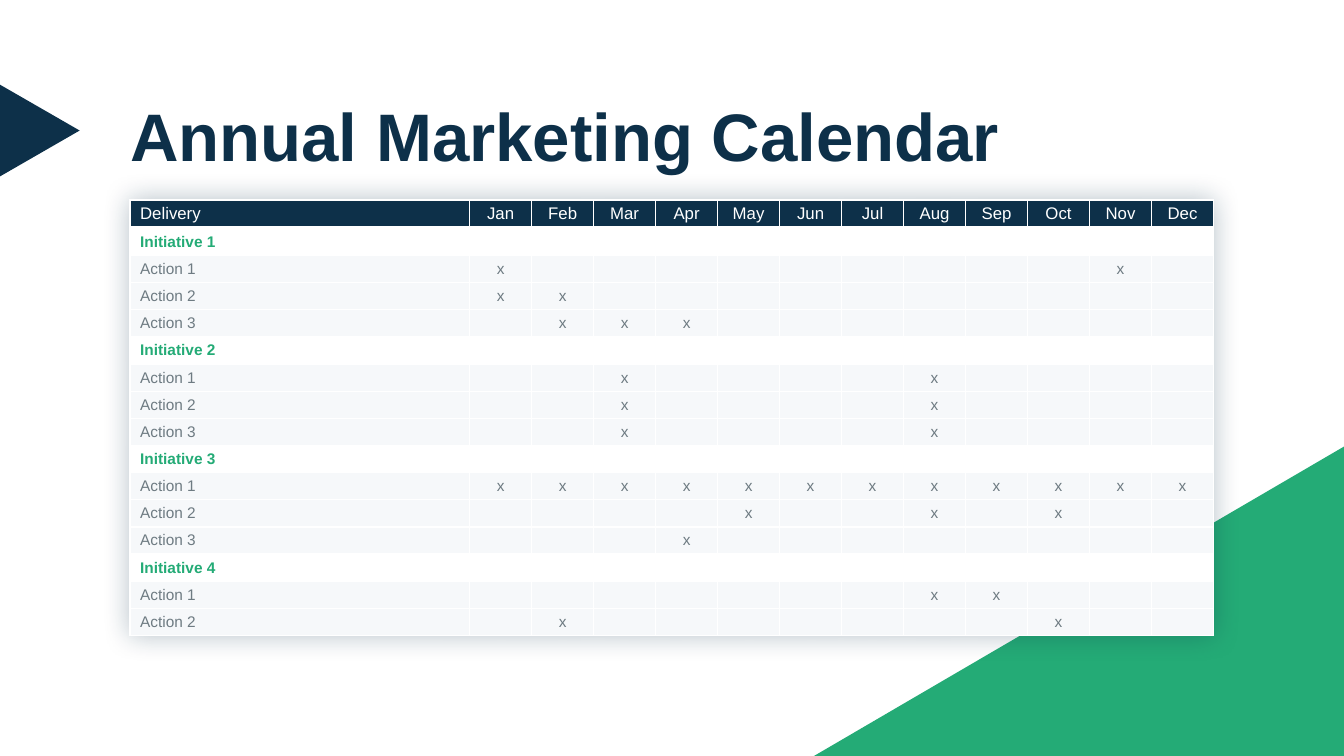
from dataclasses import dataclass

from lxml.etree import SubElement, fromstring
from pptx import Presentation
from pptx.dml.color import RGBColor
from pptx.enum.shapes import MSO_SHAPE
from pptx.enum.text import MSO_ANCHOR, PP_ALIGN
from pptx.oxml.ns import nsdecls, qn
from pptx.slide import Slide
from pptx.table import Table, _Cell
from pptx.util import Pt


@dataclass(frozen=True)
class Theme:
    font: str = "Arial"
    navy: str = "0D3049"
    green: str = "24AB76"
    gray: str = "6E7B82"
    pale: str = "F6F8FA"
    white: str = "FFFFFF"
    title_size: float = 48
    header_size: float = 12
    body_size: float = 11


@dataclass(frozen=True)
class Triangle:
    preset: MSO_SHAPE
    left: float
    top: float
    width: float
    height: float
    color: str
    rotation: float = 0
    flipped: bool = False


@dataclass(frozen=True)
class Action:
    name: str
    months: tuple[str, ...]


@dataclass(frozen=True)
class Initiative:
    name: str
    actions: tuple[Action, ...]


THEME = Theme()
MONTHS = ("Jan", "Feb", "Mar", "Apr", "May", "Jun",
          "Jul", "Aug", "Sep", "Oct", "Nov", "Dec")
TRIANGLES = (
    Triangle(MSO_SHAPE.RIGHT_TRIANGLE, 578.9, 319, 381.1, 222.5, THEME.green, flipped=True),
    Triangle(MSO_SHAPE.ISOSCELES_TRIANGLE, -4.3, 64.8, 65.5, 56.9, THEME.navy, rotation=90),
)
INITIATIVES = (
    Initiative("Initiative 1", (
        Action("Action 1", ("Jan", "Nov")),
        Action("Action 2", ("Jan", "Feb")),
        Action("Action 3", ("Feb", "Mar", "Apr")),
    )),
    Initiative("Initiative 2", (
        Action("Action 1", ("Mar", "Aug")),
        Action("Action 2", ("Mar", "Aug")),
        Action("Action 3", ("Mar", "Aug")),
    )),
    Initiative("Initiative 3", (
        Action("Action 1", MONTHS),
        Action("Action 2", ("May", "Aug", "Oct")),
        Action("Action 3", ("Apr",)),
    )),
    Initiative("Initiative 4", (
        Action("Action 1", ("Aug", "Sep")),
        Action("Action 2", ("Feb", "Oct")),
    )),
)
TABLE_LEFT, TABLE_TOP = 92.9, 142.8
NAME_WIDTH, MONTH_WIDTH = 242.6, 44.29
HEADER_HEIGHT, INITIATIVE_HEIGHT, ACTION_HEIGHT = 20, 19.65, 19.35


def draw_triangle(page: Slide, triangle: Triangle) -> None:
    shape = page.shapes.add_shape(
        triangle.preset, Pt(triangle.left), Pt(triangle.top),
        Pt(triangle.width), Pt(triangle.height))
    shape.shadow.inherit = False
    shape.fill.solid()
    shape.fill.fore_color.rgb = RGBColor.from_string(triangle.color)
    shape.line.fill.background()
    shape.rotation = triangle.rotation
    if triangle.flipped:
        shape._element.spPr.find(qn("a:xfrm")).set("flipH", "1")


def write_text(frame, text: str, *, size: float, color: str, bold: bool = False,
               align: PP_ALIGN = PP_ALIGN.LEFT) -> None:
    paragraph = frame.paragraphs[0]
    paragraph.alignment = align
    if not text:
        SubElement(paragraph._p, qn("a:endParaRPr"), sz=str(int(size * 100)))
        return
    span = paragraph.add_run()
    span.text = text
    span.font.name = THEME.font
    span.font.size = Pt(size)
    span.font.bold = bold
    span.font.color.rgb = RGBColor.from_string(color)


def draw_title(page: Slide, text: str) -> None:
    title = page.shapes.title
    title.left, title.top, title.width, title.height = Pt(92.9), Pt(72), Pt(774), Pt(54)
    frame = title.text_frame
    frame.margin_left = frame.margin_top = frame.margin_right = frame.margin_bottom = 0
    frame.vertical_anchor = MSO_ANCHOR.BOTTOM
    frame.word_wrap = True
    write_text(frame, text, size=THEME.title_size, color=THEME.navy, bold=True)
    frame.paragraphs[0].line_spacing = 0.9


def format_cell(cell: _Cell, text: str, *, fill: str, color: str, size: float = THEME.body_size,
                bold: bool = False, align: PP_ALIGN = PP_ALIGN.LEFT, bottom: float = 1) -> None:
    cell.vertical_anchor = MSO_ANCHOR.MIDDLE
    cell.margin_top = cell.margin_bottom = Pt(2)
    properties = cell._tc.get_or_add_tcPr()
    for side, width in (("L", 1), ("R", 1), ("T", 1), ("B", bottom)):
        line = SubElement(properties, qn(f"a:ln{side}"), w=str(Pt(width)))
        SubElement(SubElement(line, qn("a:solidFill")), qn("a:srgbClr"), val=THEME.white)
    cell.fill.solid()
    cell.fill.fore_color.rgb = RGBColor.from_string(fill)
    write_text(cell.text_frame, text, size=size, color=color, bold=bold, align=align)


def fill_row(table: Table, index: int, texts: list[str], height: float, **style) -> None:
    table.rows[index].height = Pt(height)
    for column, text in enumerate(texts):
        align = PP_ALIGN.CENTER if column else PP_ALIGN.LEFT
        format_cell(table.cell(index, column), text, align=align, **style)


def add_table_shadow(table: Table) -> None:
    table._tbl.tblPr.insert(0, fromstring(
        f'<a:effectLst {nsdecls("a")}><a:outerShdw blurRad="{Pt(20)}" dist="0" algn="ctr" '
        f'rotWithShape="0"><a:srgbClr val="{THEME.navy}"><a:alpha val="30000"/></a:srgbClr>'
        '</a:outerShdw></a:effectLst>'))


def draw_calendar(page: Slide) -> None:
    action_count = sum(len(initiative.actions) for initiative in INITIATIVES)
    width = NAME_WIDTH + len(MONTHS) * MONTH_WIDTH
    height = HEADER_HEIGHT + len(INITIATIVES) * INITIATIVE_HEIGHT + action_count * ACTION_HEIGHT
    table = page.shapes.add_table(
        1 + len(INITIATIVES) + action_count, 1 + len(MONTHS),
        Pt(TABLE_LEFT), Pt(TABLE_TOP), Pt(width), Pt(height)).table
    table.horz_banding = False
    add_table_shadow(table)
    for index, column in enumerate(table.columns):
        column.width = Pt(MONTH_WIDTH if index else NAME_WIDTH)

    fill_row(table, 0, ["Delivery", *MONTHS], HEADER_HEIGHT, fill=THEME.navy,
             color=THEME.white, size=THEME.header_size, bottom=3)
    row = 1
    for initiative in INITIATIVES:
        fill_row(table, row, [initiative.name] + [""] * len(MONTHS), INITIATIVE_HEIGHT,
                 fill=THEME.white, color=THEME.green, bold=True)
        table.cell(row, 0).merge(table.cell(row, len(MONTHS)))
        row += 1
        for action in initiative.actions:
            marks = ["x" if month in action.months else "" for month in MONTHS]
            fill_row(table, row, [action.name, *marks], ACTION_HEIGHT,
                     fill=THEME.pale, color=THEME.gray)
            row += 1


def main() -> None:
    deck = Presentation()
    deck.slide_width, deck.slide_height = Pt(960), Pt(540)
    page = deck.slides.add_slide(deck.slide_layouts[5])
    for triangle in TRIANGLES:
        draw_triangle(page, triangle)
    draw_title(page, "Annual Marketing Calendar")
    draw_calendar(page)
    deck.save("out.pptx")


if __name__ == "__main__":
    main()
